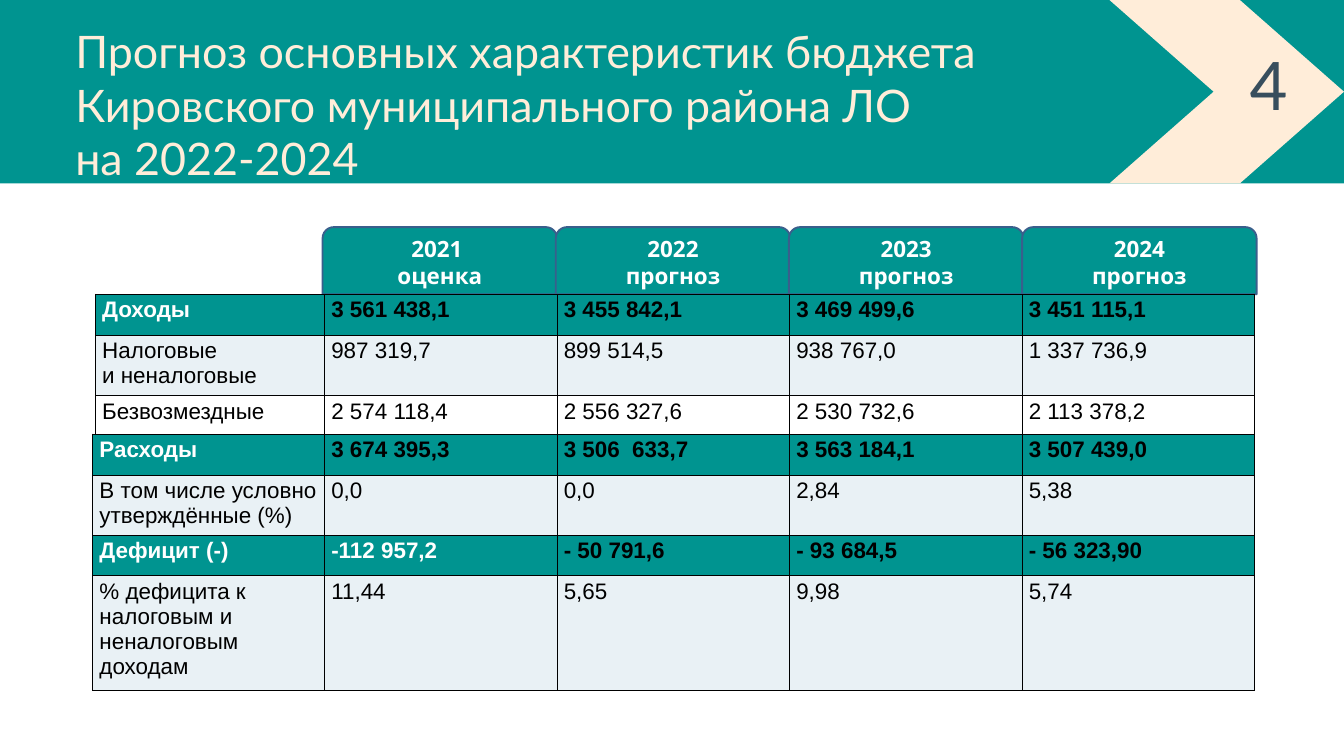
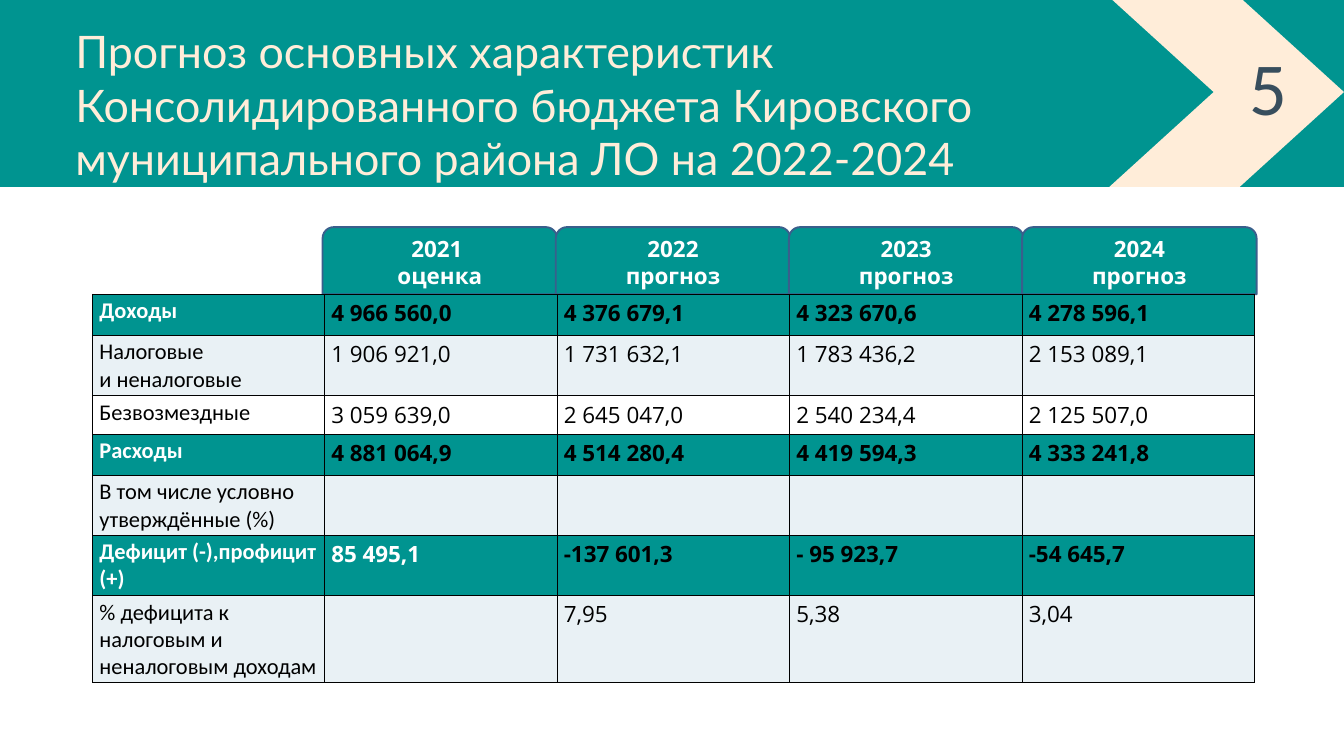
from lxml.etree import SubElement
from pptx import Presentation
from pptx.dml.color import RGBColor
from pptx.enum.shapes import MSO_SHAPE
from pptx.enum.text import MSO_ANCHOR, MSO_AUTO_SIZE, PP_ALIGN
from pptx.oxml.ns import qn
from pptx.util import Inches, Pt

COLORS = {
    "teal": "009490", "cream": "FFEDD9", "slate": "384E5D", "outline": "3A5F8C",
    "pale": "E9F1F5", "white": "FFFFFF", "black": "000000",
}
YEARS = ["2021 \nоценка", "2022\nпрогноз", "2023\nпрогноз", "2024\nпрогноз"]
TAX = "Налоговые\nи неналоговые"
GRANTS = "Безвозмездные"
RESERVED = "В том числе условно утверждённые (%)"
SHARE = "% дефицита к налоговым и неналоговым доходам"
BUDGETS = [
    {
        "title": "Прогноз основных характеристик бюджета\n"
                 "Кировского муниципального района ЛО\nна 2022-2024",
        "number": ("4", 0.62), "band": (0, 2.73), "lefts": (1.42, 1.38, 1.38),
        "fonts": ("Arial", "Arial"),
        "tables": [
            [("Доходы", "3 561 438,1", "3 455 842,1", "3 469 499,6", "3 451 115,1"),
             (TAX, "987 319,7", "899 514,5", "938 767,0", "1 337 736,9"),
             (GRANTS, "2 574 118,4", "2 556 327,6", "2 530 732,6", "2 113 378,2")],
            [("Расходы", "3 674 395,3", "3 506  633,7", "3 563 184,1", "3 507 439,0"),
             (RESERVED, "0,0", "0,0", "2,84", "5,38")],
            [("Дефицит (-)", "-112 957,2", "- 50 791,6", "- 93 684,5", "- 56 323,90"),
             (SHARE, "11,44", "5,65", "9,98", "5,74")],
        ],
    },
    {
        "title": "Прогноз основных характеристик\n"
                 "Консолидированного бюджета Кировского муниципального района ЛО на 2022-2024",
        "number": ("5", 0.7), "band": (-0.04, 2.82), "lefts": (1.38, 1.38, 1.38),
        "fonts": ("Calibri", "Open Sans"),
        "tables": [
            [("Доходы", "4 966 560,0", "4 376 679,1", "4 323 670,6", "4 278 596,1"),
             (TAX, "1 906 921,0", "1 731 632,1", "1 783 436,2", "2 153 089,1"),
             (GRANTS, "3 059 639,0", "2 645 047,0", "2 540 234,4", "2 125 507,0")],
            [("Расходы", "4 881 064,9", "4 514 280,4", "4 419 594,3", "4 333 241,8"),
             (RESERVED, "", "", "", "")],
            [("Дефицит (-),профицит (+)", "85 495,1", "-137 601,3", "- 95 923,7", "-54 645,7"),
             (SHARE, "", "7,95", "5,38", "3,04")],
        ],
    },
]
TABLE_TOPS = (4.38, 6.46, 7.96)
ROW_FILLS = ("teal", "pale", "white")
LABEL_EDGE, COLUMN_WIDTH, ROW_HEIGHT = 4.83, 3.46, 0.61
TAB_LEFT, TAB_PITCH = 4.8, 3.47


def rgb(name):
    return RGBColor.from_string(COLORS[name])


def write(frame, text, font, size, color, **paragraph_format):
    bold = paragraph_format.pop("bold", False)
    frame.text = text
    frame.word_wrap = True
    for paragraph in frame.paragraphs:
        for name, value in paragraph_format.items():
            setattr(paragraph, name, value)
        paragraph.font.color.rgb = rgb(color)
        for name, value in {"name": font, "size": Pt(size), "bold": bold}.items():
            setattr(paragraph.font, name, value)


def paint(shape, fill, line=None):
    shape.shadow.inherit = False
    shape.fill.solid()
    shape.fill.fore_color.rgb = rgb(fill)
    if line:
        shape.line.color.rgb = rgb(line)
        shape.line.width = Pt(2)
    else:
        shape.line.fill.background()


def add_text(slide, box, *style, **paragraph_format):
    frame = slide.shapes.add_textbox(*map(Inches, box)).text_frame
    for side in ("left", "top", "right", "bottom"):
        setattr(frame, f"margin_{side}", 0)
    write(frame, *style, **paragraph_format)
    frame.auto_size = MSO_AUTO_SIZE.SHAPE_TO_FIT_TEXT


def add_header(slide, budget):
    top, height = budget["band"]
    middle, bottom = top + height / 2, top + height
    band = slide.shapes.add_shape(MSO_SHAPE.RECTANGLE, *map(Inches, (0, top, 20, height)))
    paint(band, "teal")
    outline = [(18.45, top), (16.51, top), (18.06, middle),
               (16.51, bottom), (18.45, bottom), (20, middle)]
    start, *corners = [(Inches(x), Inches(y)) for x, y in outline]
    builder = slide.shapes.build_freeform(*start)
    builder.add_line_segments(corners, close=True)
    paint(builder.convert_to_shape(), "cream")
    add_text(slide, (1.12, 0.35, 17.75, 2.38), budget["title"],
             "Lato", 48, "cream", line_spacing=Pt(57.6))
    digit, digit_top = budget["number"]
    add_text(slide, (18.59, digit_top, 0.43, 1.26), digit,
             "Calibri", 80, "slate", line_spacing=Pt(89.6))


def add_year_tabs(slide):
    for index, year in enumerate(YEARS):
        box = (TAB_LEFT + index * TAB_PITCH, 3.38, 3.49, 1)
        tab = slide.shapes.add_shape(MSO_SHAPE.ROUND_2_SAME_RECTANGLE, *map(Inches, box))
        paint(tab, "teal", "outline")
        write(tab.text_frame, year, "Open Sans", 24, "white",
              bold=True, alignment=PP_ALIGN.CENTER)
        tab.text_frame.vertical_anchor = MSO_ANCHOR.MIDDLE


def add_borders(cell):
    properties = cell._tc.get_or_add_tcPr()
    for side in "LRTB":
        line = SubElement(properties, qn(f"a:ln{side}"), w=str(Pt(1)))
        fill = SubElement(line, qn("a:solidFill"))
        SubElement(fill, qn("a:srgbClr"), val=COLORS["black"])


def add_budget_table(slide, left, top, rows, fonts):
    widths = [LABEL_EDGE - left] + [COLUMN_WIDTH] * len(YEARS)
    box = (left, top, sum(widths), ROW_HEIGHT * len(rows))
    table = slide.shapes.add_table(len(rows), len(widths), *map(Inches, box)).table
    table.first_row = table.horz_banding = False
    for column, width in zip(table.columns, widths):
        column.width = Inches(width)
    for row_index, row in enumerate(rows):
        is_total = row_index == 0
        white_cells = 2 if row[0].startswith("Дефицит") else 1
        for column_index, text in enumerate(row):
            cell = table.cell(row_index, column_index)
            add_borders(cell)
            cell.fill.solid()
            cell.fill.fore_color.rgb = rgb(ROW_FILLS[row_index])
            color = "white" if is_total and column_index < white_cells else "black"
            write(cell.text_frame, text, fonts[column_index > 0], 24, color, bold=is_total)


def main():
    presentation = Presentation()
    presentation.slide_width, presentation.slide_height = Inches(20), Inches(11.25)
    for budget in BUDGETS:
        slide = presentation.slides.add_slide(presentation.slide_layouts[6])
        add_header(slide, budget)
        add_year_tabs(slide)
        for left, top, rows in zip(budget["lefts"], TABLE_TOPS, budget["tables"]):
            add_budget_table(slide, left, top, rows, budget["fonts"])
    presentation.save("out.pptx")


if __name__ == "__main__":
    main()
